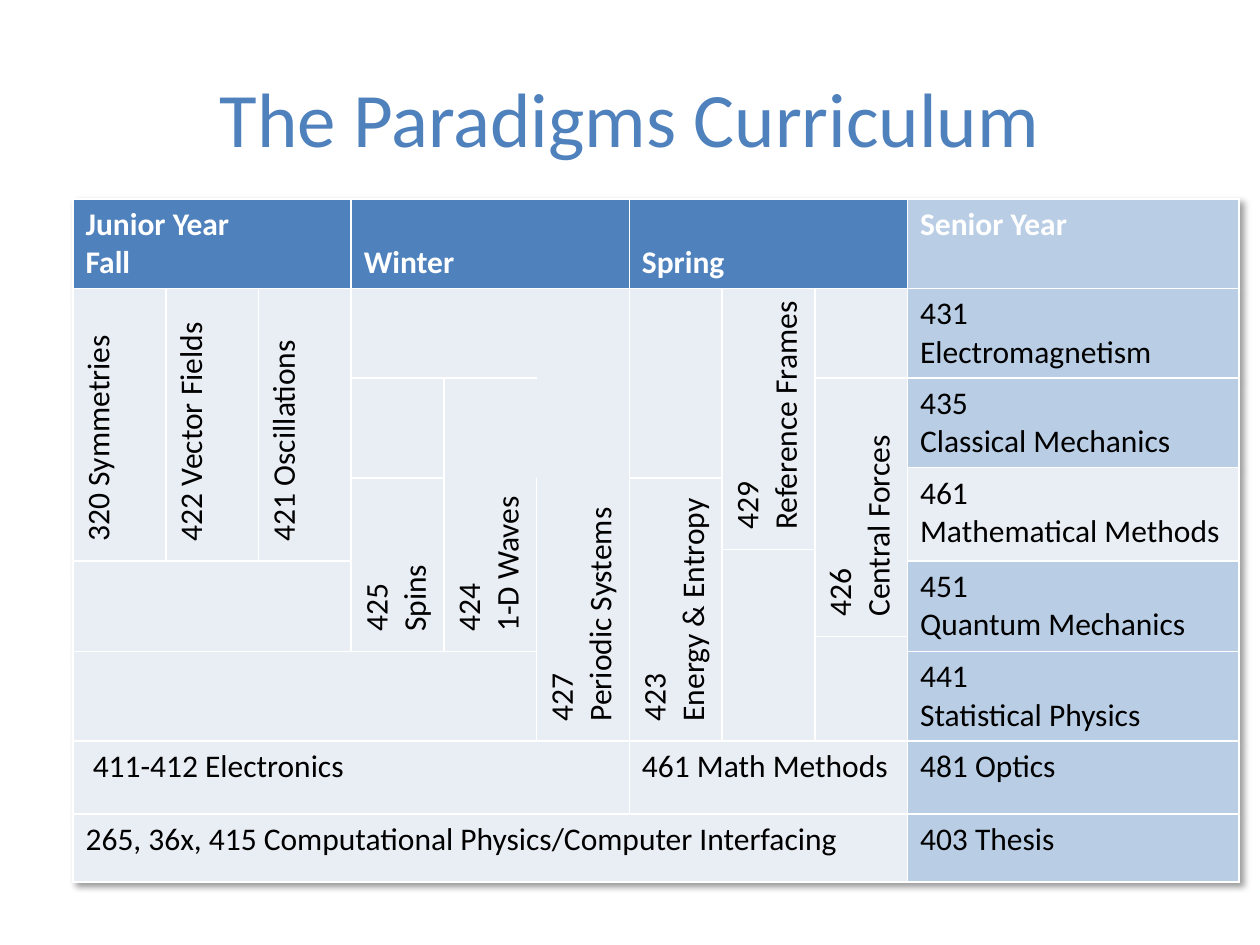
from lxml import etree
from pptx import Presentation
from pptx.dml.color import RGBColor
from pptx.enum.text import MSO_ANCHOR, PP_ALIGN
from pptx.oxml.ns import qn
from pptx.util import Inches, Pt

TOP, MIDDLE, BOTTOM = MSO_ANCHOR.TOP, MSO_ANCHOR.MIDDLE, MSO_ANCHOR.BOTTOM
LEFT, CENTER = PP_ALIGN.LEFT, PP_ALIGN.CENTER

BLUE = RGBColor(0x4F, 0x81, 0xBD)
LIGHT_BLUE = RGBColor(0xB9, 0xCD, 0xE5)
PALE = RGBColor(0xE9, 0xED, 0xF4)
WHITE = RGBColor(0xFF, 0xFF, 0xFF)
BLACK = RGBColor(0, 0, 0)

TITLE = "The Paradigms Curriculum"
COLUMN_WIDTHS = [0.736] * 9 + [2.63]
ROW_HEIGHTS = [0.71, 0.71, 0.71, 0.08, 0.57, 0.09, 0.6, 0.12, 0.71, 0.58, 0.54]

# row, column, rows spanned, columns spanned, text, fill
HEADERS = [
    (0, 0, 1, 3, "Junior Year\nFall", BLUE),
    (0, 3, 1, 3, "Winter", BLUE),
    (0, 6, 1, 3, "Spring", BLUE),
    (0, 9, 1, 1, "Senior Year", LIGHT_BLUE),
]
JUNIOR_COURSES = [
    (1, 0, 5, 1, " 320 Symmetries", PALE),
    (1, 1, 5, 1, " 422 Vector Fields", PALE),
    (1, 2, 5, 1, " 421 Oscillations", PALE),
    (4, 3, 4, 1, " 425\n Spins", PALE),
    (2, 4, 6, 1, " 424\n 1-D Waves", PALE),
    (4, 5, 5, 1, " 427\n Periodic Systems", PALE),
    (4, 6, 5, 1, " 423\n Energy & Entropy", PALE),
    (1, 7, 4, 1, " 429\n Reference Frames", PALE),
    (2, 8, 5, 1, " 426\n Central Forces", PALE),
]
FREE_TIME = [
    (1, 3, 1, 3, "", PALE),
    (2, 3, 2, 1, "", PALE),
    (2, 5, 2, 1, "", PALE),
    (1, 6, 3, 1, "", PALE),
    (1, 8, 1, 1, "", PALE),
    (5, 7, 4, 1, "", PALE),
    (6, 0, 2, 3, "", PALE),
    (7, 8, 2, 1, "", PALE),
    (8, 0, 1, 5, "", PALE),
]
YEAR_LONG_AND_SENIOR = [
    (1, 9, 1, 1, "431\nElectromagnetism", LIGHT_BLUE),
    (2, 9, 1, 1, "435\nClassical Mechanics", LIGHT_BLUE),
    (3, 9, 3, 1, "461\nMathematical Methods", PALE),
    (6, 9, 2, 1, "451\nQuantum Mechanics", LIGHT_BLUE),
    (8, 9, 1, 1, "441\nStatistical Physics", LIGHT_BLUE),
    (9, 0, 1, 6, " 411-412 Electronics", PALE),
    (9, 6, 1, 3, "461 Math Methods", PALE),
    (9, 9, 1, 1, "481 Optics", LIGHT_BLUE),
    (10, 0, 1, 9, "265, 36x, 415 Computational Physics/Computer Interfacing", PALE),
    (10, 9, 1, 1, "403 Thesis", LIGHT_BLUE),
]
# Cells with some sides left open; the sides named here are the ruled ones
RULED_SIDES = {(2, 4): "LTB", (2, 5): "", (4, 5): "LRB"}


def write(frame, text, size=18, color=BLACK, bold=False, align=LEFT):
    for number, line in enumerate(text.split("\n")):
        para = frame.paragraphs[0] if number == 0 else frame.add_paragraph()
        para.alignment = align
        para.font.size = Pt(size)
        if line:
            span = para.add_run()
            span.text = line
            span.font.name = "Calibri"
            span.font.size = Pt(size)
            span.font.bold = bold
            span.font.color.rgb = color


def rule_sides(cell, ruled):
    """Draw the ruled sides in white and leave the others open."""
    properties = cell._tc.get_or_add_tcPr()
    for side in "LRTB":
        line = etree.SubElement(properties, qn(f"a:ln{side}"), w=str(Pt(1)))
        if side in ruled:
            fill = etree.SubElement(line, qn("a:solidFill"))
            etree.SubElement(fill, qn("a:srgbClr"), val=str(WHITE))
        else:
            etree.SubElement(line, qn("a:noFill"))


def add_table_shadow(table):
    effects = etree.Element(qn("a:effectLst"))
    shadow = etree.SubElement(effects, qn("a:outerShdw"), blurRad=str(Pt(4)),
                              dist=str(Pt(3)), dir="2700000", algn="tl", rotWithShape="0")
    color = etree.SubElement(shadow, qn("a:srgbClr"), val=str(BLACK))
    etree.SubElement(color, qn("a:alpha"), val="40000")
    table._tbl.tblPr.insert(0, effects)


def fill_cells(table, entries, vertical=False, anchor=TOP, **text_format):
    for row, column, rows, columns, text, fill in entries:
        cell = table.cell(row, column)
        if rows * columns > 1:
            cell.merge(table.cell(row + rows - 1, column + columns - 1))
        if (row, column) in RULED_SIDES:
            for covered in range(row, row + rows):
                rule_sides(table.cell(covered, column), RULED_SIDES[row, column])
        cell.fill.solid()
        cell.fill.fore_color.rgb = fill
        cell.vertical_anchor = anchor
        if vertical:
            cell._tc.get_or_add_tcPr().set("vert", "vert270")
        write(cell.text_frame, text, **text_format)


def main():
    deck = Presentation()
    deck.slide_width, deck.slide_height = Inches(10), Inches(7.5)
    page = deck.slides.add_slide(deck.slide_layouts[5])

    title = page.shapes.title
    title.left, title.top = Inches(0.5), Inches(0.3)
    title.width, title.height = Inches(9), Inches(1.25)
    title.text_frame.vertical_anchor = MIDDLE
    write(title.text_frame, TITLE, size=44, color=BLUE, align=CENTER)

    table = page.shapes.add_table(
        len(ROW_HEIGHTS), len(COLUMN_WIDTHS), Inches(0.58), Inches(1.58),
        Inches(sum(COLUMN_WIDTHS)), Inches(sum(ROW_HEIGHTS))).table
    for column, width in zip(table.columns, COLUMN_WIDTHS):
        column.width = Inches(width)
    for row, height in zip(table.rows, ROW_HEIGHTS):
        row.height = Inches(height)
    add_table_shadow(table)

    fill_cells(table, HEADERS[:3], anchor=BOTTOM, color=WHITE, bold=True)
    fill_cells(table, HEADERS[3:], color=WHITE, bold=True)
    fill_cells(table, JUNIOR_COURSES, vertical=True)
    fill_cells(table, FREE_TIME)
    fill_cells(table, YEAR_LONG_AND_SENIOR)
    deck.save("out.pptx")


if __name__ == "__main__":
    main()
